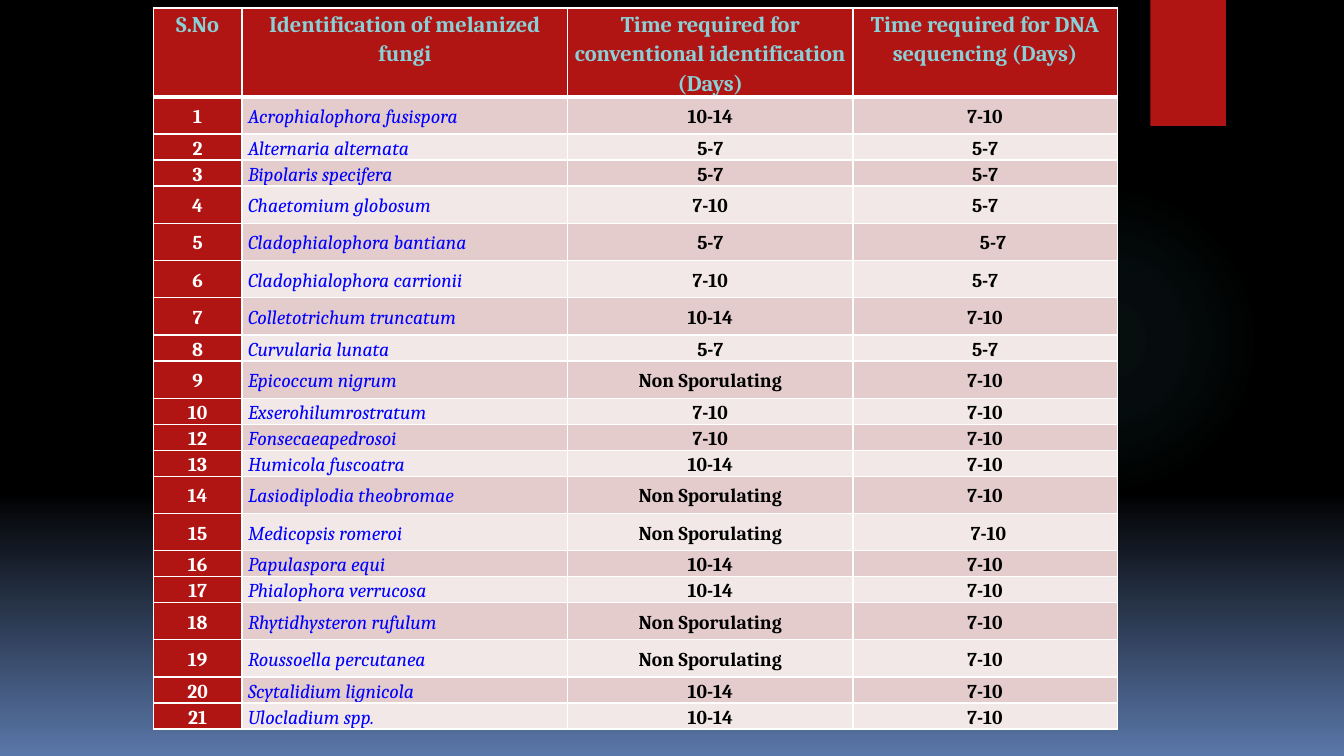
"""Build a slide comparing identification times for melanized fungi."""
from dataclasses import dataclass

from lxml.etree import SubElement
from pptx import Presentation
from pptx.dml.color import RGBColor
from pptx.enum.shapes import MSO_SHAPE
from pptx.enum.text import MSO_ANCHOR, PP_ALIGN
from pptx.oxml import parse_xml
from pptx.oxml.ns import nsdecls, qn
from pptx.util import Inches, Pt


@dataclass(frozen=True)
class Theme:
    """Colours, font and type sizes of the slide."""
    font: str = "Cambria"
    header_size: int = 16
    body_size: int = 14
    red: str = "B01513"
    aqua: str = "8AD0D6"
    glow: str = "50B9C1"
    blue: str = "0000FF"
    white: str = "FFFFFF"
    black: str = "000000"
    dusk: str = "5A77A9"
    bands: tuple = ("E4CCCC", "F2E8E7")


def gradient(stops, direction):
    """Return a gradient fill from (position, colour, opacity) stops in percent."""
    marks = "".join(
        f'<a:gs pos="{position * 1000}"><a:srgbClr val="{color}">'
        f'<a:alpha val="{opacity * 1000}"/></a:srgbClr></a:gs>'
        for position, color, opacity in stops)
    return parse_xml(f'<a:gradFill {nsdecls("a")} rotWithShape="1">'
                     f"<a:gsLst>{marks}</a:gsLst>{direction}</a:gradFill>")


def style_cell(cell, text, fill, color, size, bold, align, edges):
    """Fill one cell, write its text and draw its four edges."""
    cell.margin_left = cell.margin_right = Inches(0.06)
    cell.margin_top = cell.margin_bottom = 0
    cell.fill.solid()
    cell.fill.fore_color.rgb = RGBColor.from_string(fill)
    para = cell.text_frame.paragraphs[0]
    para.alignment = align
    para.line_spacing = 1.15
    span = para.add_run()
    span.text = text
    span.font.name = theme.font
    span.font.size = Pt(size)
    span.font.bold = bold
    span.font.italic = not bold
    span.font.color.rgb = RGBColor.from_string(color)
    properties = cell._tc.get_or_add_tcPr()
    for position, (side, width) in enumerate(zip("LRTB", edges)):
        properties.insert(position, parse_xml(
            f'<a:ln{side} {nsdecls("a")} w="{Pt(width)}"><a:solidFill>'
            f'<a:srgbClr val="{theme.white}"/></a:solidFill></a:ln{side}>'))


theme = Theme()
deck = Presentation()
deck.slide_width, deck.slide_height = Inches(13.33), Inches(7.5)
page = deck.slides.add_slide(deck.slide_layouts[6])

page.background.fill.solid()
backdrop = page.element.find(".//" + qn("p:bgPr"))
backdrop.replace(backdrop[0], gradient(
    [(0, theme.black, 100), (65, theme.black, 100), (100, theme.dusk, 100)],
    '<a:lin ang="5400000" scaled="0"/>'))

halo = page.shapes.add_shape(MSO_SHAPE.OVAL, Inches(9.41), Inches(1.83),
                             Inches(3.08), Inches(3.08))
halo.shadow.inherit = False
halo.line.fill.background()
halo.fill.solid()
halo_properties = halo.element.spPr
halo_properties.replace(halo_properties.find(qn("a:solidFill")), gradient(
    [(0, theme.glow, 7), (36, theme.glow, 6), (69, theme.glow, 0)],
    '<a:path path="circle"><a:fillToRect l="50000" t="50000" r="50000" b="50000"/></a:path>'))

ribbon = page.shapes.add_shape(MSO_SHAPE.RECTANGLE, Inches(11.41), 0,
                               Inches(0.75), Inches(1.25))
ribbon.shadow.inherit = False
ribbon.line.fill.background()
ribbon.fill.solid()
ribbon.fill.fore_color.rgb = RGBColor.from_string(theme.red)
shadow = SubElement(ribbon.element.spPr.find(qn("a:effectLst")), qn("a:outerShdw"),
                    blurRad=str(Pt(3)), dist=str(Pt(2)), dir="5400000", rotWithShape="0")
shade = SubElement(shadow, qn("a:srgbClr"), val=theme.black)
SubElement(shade, qn("a:alpha"), val="45000")

headers = ["S.No", "Identification of melanized fungi",
           "Time required for conventional identification (Days)",
           "Time required for DNA sequencing (Days)"]
TALL, SHORT = 0.37, 0.24
fungi = [
    ("1", "Acrophialophora fusispora", "10-14", "7-10", TALL),
    ("2", "Alternaria alternata", "5-7", "5-7", SHORT),
    ("3", "Bipolaris specifera", "5-7", "5-7", SHORT),
    ("4", "Chaetomium globosum", "7-10", "5-7", TALL),
    ("5", "Cladophialophora bantiana", "5-7", "5-7", TALL),
    ("6", "Cladophialophora carrionii", "7-10", "5-7", TALL),
    ("7", "Colletotrichum truncatum", "10-14", "7-10", TALL),
    ("8", "Curvularia lunata", "5-7", "5-7", SHORT),
    ("9", "Epicoccum nigrum", "Non Sporulating", "7-10", TALL),
    ("10", "Exserohilumrostratum", "7-10", "7-10", SHORT),
    ("12", "Fonsecaeapedrosoi", "7-10", "7-10", SHORT),
    ("13", "Humicola fuscoatra", "10-14", "7-10", SHORT),
    ("14", "Lasiodiplodia theobromae", "Non Sporulating", "7-10", TALL),
    ("15", "Medicopsis romeroi", "Non Sporulating", "7-10", TALL),
    ("16", "Papulaspora equi", "10-14", "7-10", SHORT),
    ("17", "Phialophora verrucosa", "10-14", "7-10", SHORT),
    ("18", "Rhytidhysteron rufulum", "Non Sporulating", "7-10", TALL),
    ("19", "Roussoella percutanea", "Non Sporulating", "7-10", TALL),
    ("20", "Scytalidium lignicola", "10-14", "7-10", SHORT),
    ("21", "Ulocladium spp.", "10-14", "7-10", SHORT),
]
sequencing_indents = {"5": 1.26, "15": 1.17}

table = page.shapes.add_table(len(fungi) + 1, len(headers), Inches(1.52), Inches(0.08),
                              Inches(9.56), Inches(7.29)).table
table.horz_banding = False
for column, width in zip(table.columns, (0.88, 3.23, 2.83, 2.62)):
    column.width = Inches(width)

table.rows[0].height = Inches(0.84)
for column, header in enumerate(headers):
    style_cell(table.cell(0, column), header, theme.red, theme.aqua, theme.header_size,
               True, PP_ALIGN.CENTER, (1, 1, 1, 3))

for row, (*values, height) in enumerate(fungi, start=1):
    table.rows[row].height = Inches(height)
    band = theme.bands[(row - 1) % 2]
    fills = (theme.red, band, band, band)
    colors = (theme.white, theme.blue, theme.black, theme.black)
    for column, text in enumerate(values):
        cell = table.cell(row, column)
        is_name = column == 1
        is_indented = column == 3 and values[0] in sequencing_indents
        align = PP_ALIGN.LEFT if is_name or is_indented else PP_ALIGN.CENTER
        style_cell(cell, text, fills[column], colors[column], theme.body_size,
                   not is_name, align, (1, 1, 3 if row == 1 else 1, 1))
        cell.vertical_anchor = MSO_ANCHOR.MIDDLE
        if is_indented:
            cell.margin_left = Inches(sequencing_indents[values[0]])

deck.save("out.pptx")
